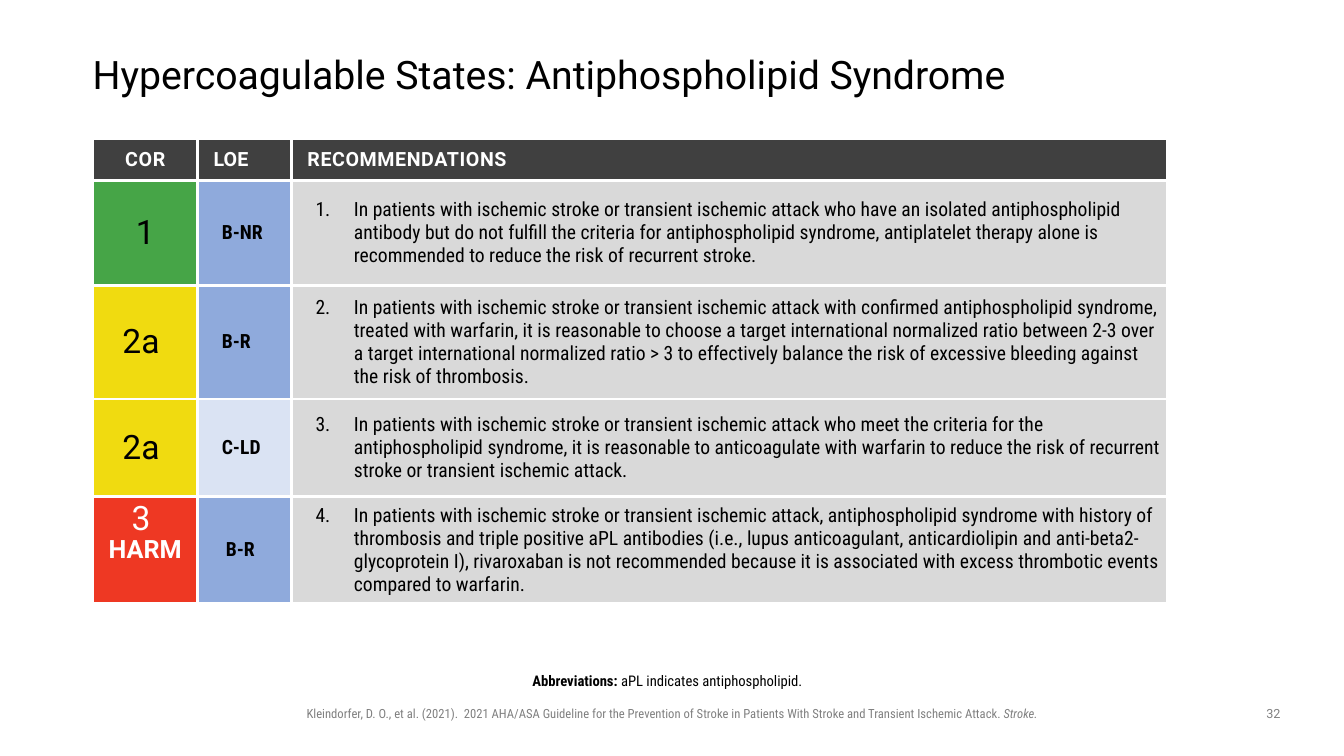
from lxml import etree
from pptx import Presentation
from pptx.dml.color import RGBColor
from pptx.enum import text
from pptx.oxml import ns
from pptx.util import Inches, Pt

COLORS = {
    "black": "000000", "white": "FFFFFF", "gray": "808080",
    "header": "404040", "body": "D9D9D9",
    "green": "46A547", "yellow": "F0DB10", "red": "EE3823",
    "blue": "8FAADC", "pale blue": "DAE3F3",
}
CENTER = text.PP_ALIGN.CENTER
MIDDLE = text.MSO_ANCHOR.MIDDLE
TOP = text.MSO_ANCHOR.TOP


def style(font, name, size, color, bold=False):
    font.name, font.size, font.bold = name, Pt(size), bold
    font.color.rgb = RGBColor.from_string(COLORS[color])


def add_text_box(left, top, width, height, insets=(0.1, 0.05, 0.1, 0.05)):
    box = slide.shapes.add_textbox(Inches(left), Inches(top), Inches(width), Inches(height))
    frame = box.text_frame
    frame.word_wrap = True
    (frame.margin_left, frame.margin_top,
     frame.margin_right, frame.margin_bottom) = map(Inches, insets)
    return frame


presentation = Presentation()
presentation.slide_width, presentation.slide_height = Inches(13.33), Inches(7.5)
slide = presentation.slides.add_slide(presentation.slide_layouts[6])

# Title
frame = add_text_box(0.92, 0.4, 11.5, 0.72, (0, 0, 0, 0))
frame.vertical_anchor = MIDDLE
paragraph = frame.paragraphs[0]
paragraph.line_spacing = 0.9
paragraph.add_run().text = "Hypercoagulable States: Antiphospholipid Syndrome"
style(paragraph.font, "Roboto", 28, "black")

# Table grid
column_widths = [1.04, 0.93, 8.69]
row_heights = [0.41, 1.04, 1.13, 0.97, 1.06]
table = slide.shapes.add_table(
    len(row_heights), len(column_widths), Inches(0.92), Inches(1.38),
    Inches(sum(column_widths)), Inches(sum(row_heights))).table
for column, width in zip(table.columns, column_widths):
    column.width = Inches(width)
for row, height in zip(table.rows, row_heights):
    row.height = Inches(height)

# White borders and middle anchoring for every cell
for cell in table.iter_cells():
    cell.vertical_anchor = MIDDLE
    properties = cell._tc.get_or_add_tcPr()
    for side in ("a:lnL", "a:lnR", "a:lnT", "a:lnB"):
        line = etree.SubElement(properties, ns.qn(side), w=str(Pt(2.25)))
        fill = etree.SubElement(line, ns.qn("a:solidFill"))
        etree.SubElement(fill, ns.qn("a:srgbClr"), val=COLORS["white"])

# Header row: label, indent, letter spacing in hundredths of a point
headers = [("COR", 0, 50), ("LOE", 0.06, 0), ("RECOMMENDATIONS", 0.06, 40)]
for column, (label, indent, spacing) in enumerate(headers):
    cell = table.cell(0, column)
    cell.fill.solid()
    cell.fill.fore_color.rgb = RGBColor.from_string(COLORS["header"])
    paragraph = cell.text_frame.paragraphs[0]
    if indent:
        paragraph._p.get_or_add_pPr().set("marL", str(Inches(indent)))
    else:
        paragraph.alignment = CENTER
    run = paragraph.add_run()
    run.text = label
    run._r.get_or_add_rPr().set("spc", str(spacing))
    style(paragraph.font, "Roboto", 14, "white", True)

# Recommendation rows: class, its colour, level, its colour, level indent, text
recommendations = [
    ("1", "green", "B-NR", "blue", 0.19,
     "In patients with ischemic stroke or transient ischemic attack who have an isolated "
     "antiphospholipid antibody but do not fulfill the criteria for antiphospholipid syndrome, "
     "antiplatelet therapy alone is recommended to reduce the risk of recurrent stroke."),
    ("2a ", "yellow", "B-R", "blue", 0.19,
     "In patients with ischemic stroke or transient ischemic attack with confirmed "
     "antiphospholipid syndrome, treated with warfarin, it is reasonable to choose a target "
     "international normalized ratio between 2-3 over a target international normalized ratio "
     "> 3 to effectively balance the risk of excessive bleeding against the risk of thrombosis."),
    ("2a ", "yellow", "C-LD", "pale blue", 0.19,
     "In patients with ischemic stroke or transient ischemic attack who meet the criteria for "
     "the antiphospholipid syndrome, it is reasonable to anticoagulate with warfarin to reduce "
     "the risk of recurrent stroke or transient ischemic attack."),
    ("3 ", "red", "B-R", "blue", 0.23,
     "In patients with ischemic stroke or transient ischemic attack, antiphospholipid syndrome "
     "with history of thrombosis and triple positive aPL antibodies (i.e., lupus anticoagulant, "
     "anticardiolipin and anti-beta2-glycoprotein I), rivaroxaban is not recommended because it "
     "is associated with excess thrombotic events compared to warfarin."),
]
for number, (grade, grade_color, level, level_color, indent, advice) in enumerate(recommendations, 1):
    cells = [table.cell(number, column) for column in range(3)]
    for cell, color in zip(cells, (grade_color, level_color, "body")):
        cell.margin_left = cell.margin_right = Inches(0.05)
        cell.margin_top = cell.margin_bottom = Inches(0.05)
        cell.fill.solid()
        cell.fill.fore_color.rgb = RGBColor.from_string(COLORS[color])
    grade_paragraph, level_paragraph, advice_paragraph = [
        cell.text_frame.paragraphs[0] for cell in cells]

    # Class of recommendation
    grade_paragraph.alignment = CENTER
    run = grade_paragraph.add_run()
    run.text = grade
    if grade_color == "red":
        cells[0].vertical_anchor = TOP
        grade_paragraph.line_spacing = 0.9
        style(run.font, "Roboto", 24, "white")
        grade_paragraph.add_line_break()
        run = grade_paragraph.add_run()
        run.text = "HARM"
        style(run.font, "Roboto", 18, "white", True)
    else:
        style(grade_paragraph.font, "Roboto", 24, "black")

    # Level of evidence
    level_paragraph._p.get_or_add_pPr().set("marL", str(Inches(indent)))
    level_paragraph.add_run().text = level
    style(level_paragraph.font, "Roboto Condensed", 14, "black", True)

    # Numbered advice
    properties = advice_paragraph._p.get_or_add_pPr()
    properties.set("marL", str(Inches(0.57)))
    properties.set("indent", str(Inches(-0.38)))
    etree.SubElement(properties, ns.qn("a:buFont"), typeface="+mj-lt")
    etree.SubElement(properties, ns.qn("a:buAutoNum"), type="arabicPeriod", startAt=str(number))
    advice_paragraph.add_run().text = advice
    style(advice_paragraph.font, "Roboto Condensed", 14, "black")

# Abbreviations
paragraph = add_text_box(0.92, 6.64, 11.5, 0.3, (0, 0.05, 0.1, 0.05)).paragraphs[0]
paragraph.alignment = CENTER
paragraph.line_spacing = 0.9
for words, bold in (("Abbreviations: ", True), ("aPL indicates antiphospholipid.", False)):
    run = paragraph.add_run()
    run.text = words
    style(run.font, "Roboto Condensed", 10.5, "black", bold)

# Citation
paragraph = add_text_box(2.94, 6.95, 7.45, 0.25).paragraphs[0]
paragraph.alignment = CENTER
citation = ("Kleindorfer, D. O., et al. (2021).  2021 AHA/ASA Guideline for the Prevention of "
            "Stroke in Patients With Stroke and Transient Ischemic Attack. ")
for words, italic in ((citation, False), ("Stroke.", True)):
    run = paragraph.add_run()
    run.text = words
    style(run.font, "Roboto Condensed", 9, "gray")
    run.font.italic = italic

# Slide number
paragraph = add_text_box(12.42, 6.95, 0.42, 0.26).paragraphs[0]
paragraph.alignment = CENTER
paragraph.add_run().text = "32"
style(paragraph.font, "Roboto", 9, "gray")

presentation.save("out.pptx")
